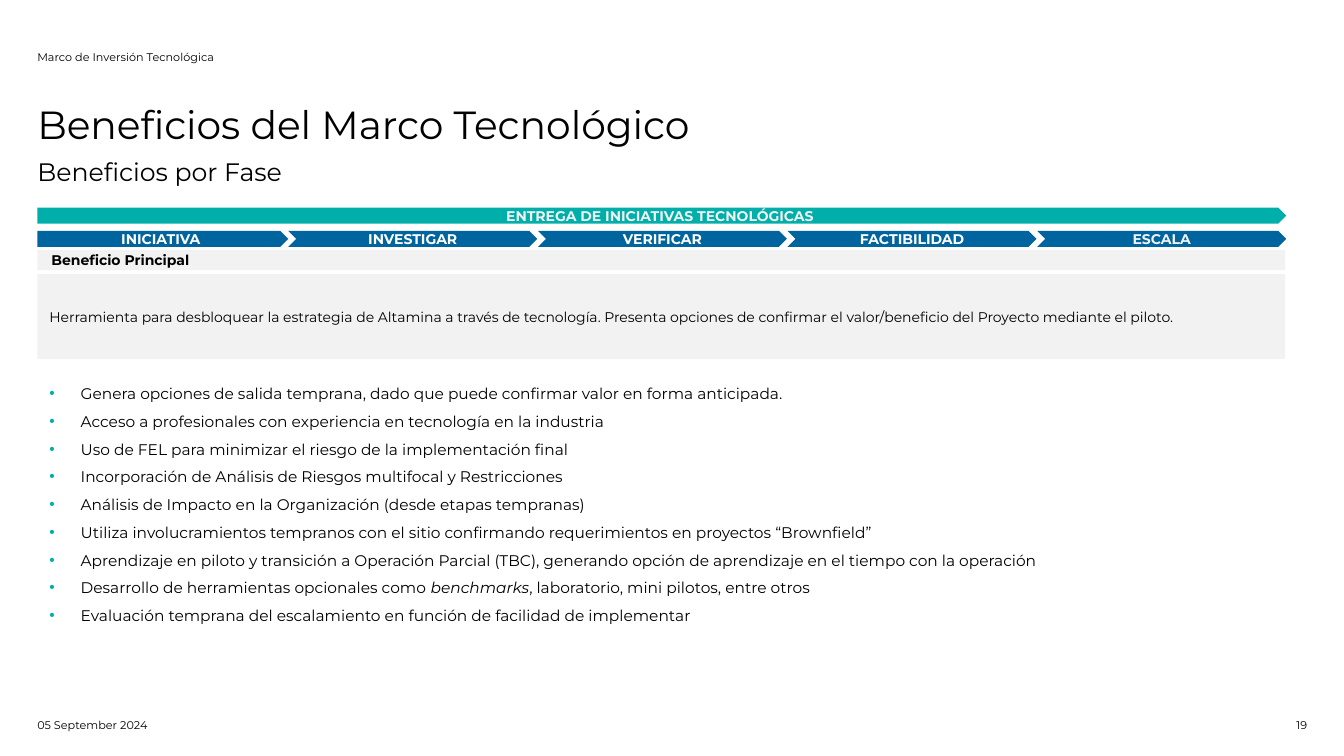
"""Build the slide on the benefits of the technology framework by phase."""
from dataclasses import dataclass

from lxml.etree import SubElement
from pptx import Presentation
from pptx.dml.color import RGBColor
from pptx.enum.shapes import MSO_SHAPE
from pptx.enum.text import MSO_ANCHOR, MSO_AUTO_SIZE, PP_ALIGN
from pptx.oxml.ns import qn
from pptx.util import Pt


@dataclass(frozen=True)
class Theme:
    font: str = "Montserrat"
    black: str = "000000"
    white: str = "FFFFFF"
    gray: str = "F2F2F2"
    teal: str = "00AFAA"
    blue: str = "00649E"
    title: float = 28
    head: float = 18
    list: float = 11
    label: float = 10
    small: float = 8


@dataclass(frozen=True)
class Box:
    left: float
    top: float
    width: float
    height: float

    def spread(self) -> tuple:
        return tuple(Pt(n) for n in (self.left, self.top, self.width, self.height))


@dataclass(frozen=True)
class Note:
    text: str
    box: Box
    align: PP_ALIGN = PP_ALIGN.LEFT
    anchor: MSO_ANCHOR = MSO_ANCHOR.TOP


@dataclass(frozen=True)
class Panel:
    text: str
    box: Box
    inset: float
    bold: bool = False


@dataclass(frozen=True)
class Arrow:
    text: str
    box: Box
    kind: MSO_SHAPE
    fill: str
    color: str


THEME = Theme()
EDGE = 26.64
WIDE = 891.36
BAR = 11.52
STEP = 178.32
LAST = 740.88
INDENT = 22.3

NOTES = [
    Note("Marco de Inversión Tecnológica", Box(EDGE, 30.96, 283.68, 14.4), anchor=MSO_ANCHOR.BOTTOM),
    Note("05 September 2024", Box(EDGE, 513.36, 113, 17.3)),
    Note("19", Box(876.96, 513.36, 56.9, 14.4), align=PP_ALIGN.RIGHT),
]
PANELS = [
    Panel("Beneficio Principal", Box(EDGE, 178.56, WIDE, 14.4), 10.1, True),
    Panel("Herramienta para desbloquear la estrategia de Altamina a través de tecnología. "
          "Presenta opciones de confirmar el valor/beneficio del Proyecto mediante el piloto.",
          Box(EDGE, 195.84, WIDE, 60.5), 8.64),
]
PHASES = ["INICIATIVA", "INVESTIGAR", "VERIFICAR", "FACTIBILIDAD", "ESCALA"]
GAINS = [
    "Genera opciones de salida temprana, dado que puede confirmar valor en forma anticipada.",
    "Acceso a profesionales con experiencia en tecnología en la industria",
    "Uso de FEL para minimizar el riesgo de la implementación final",
    "Incorporación de Análisis de Riesgos multifocal y Restricciones",
    "Análisis de Impacto en la Organización (desde etapas tempranas)",
    "Utiliza involucramientos tempranos con el sitio confirmando requerimientos en proyectos “Brownfield”",
    "Aprendizaje en piloto y transición a Operación Parcial (TBC), "
    "generando opción de aprendizaje en el tiempo con la operación",
    "Desarrollo de herramientas opcionales como *benchmarks*, laboratorio, mini pilotos, entre otros",
    "Evaluación temprana del escalamiento en función de facilidad de implementar",
]


def mark(line, bullet: bool) -> None:
    props = line._p.get_or_add_pPr()
    props.set("marL", str(Pt(INDENT) if bullet else 0))
    props.set("indent", str(-Pt(INDENT) if bullet else 0))
    if bullet:
        tint = SubElement(props, qn("a:buClr"))
        SubElement(tint, qn("a:srgbClr")).set("val", THEME.teal)
        SubElement(props, qn("a:buChar")).set("char", "•")
    else:
        SubElement(props, qn("a:buNone"))


def write(shape, lines: list[str], *, size: float, color: str = THEME.black, bold: bool = False,
          align: PP_ALIGN = PP_ALIGN.LEFT, anchor: MSO_ANCHOR = MSO_ANCHOR.TOP,
          inset: tuple = (0, 0, 0, 0), pitch: float = 1.0, bullet: bool = False) -> None:
    frame = shape.text_frame
    frame.word_wrap = True
    frame.auto_size = MSO_AUTO_SIZE.NONE
    frame.vertical_anchor = anchor
    (frame.margin_left, frame.margin_top,
     frame.margin_right, frame.margin_bottom) = (Pt(n) for n in inset)
    for rank, text in enumerate(lines):
        line = frame.add_paragraph() if rank else frame.paragraphs[0]
        line.alignment = align
        line.line_spacing = pitch
        line.space_before = line.space_after = Pt(0)
        mark(line, bullet)
        for part, words in enumerate(text.split("*")):
            run = line.add_run()
            run.text = words
            font = run.font
            font.name, font.size, font.bold = THEME.font, Pt(size), bold
            font.italic = part % 2 == 1
            font.color.rgb = RGBColor.from_string(color)


def place(shape, box: Box) -> None:
    shape.left, shape.top, shape.width, shape.height = box.spread()


def block(slide, kind: MSO_SHAPE, box: Box, fill: str):
    shape = slide.shapes.add_shape(kind, *box.spread())
    shape.shadow.inherit = False
    shape.fill.solid()
    shape.fill.fore_color.rgb = RGBColor.from_string(fill)
    shape.line.fill.background()
    return shape


def arrows() -> list[Arrow]:
    tip = MSO_SHAPE.PENTAGON
    row = [Arrow("ENTREGA DE INICIATIVAS TECNOLÓGICAS", Box(EDGE, 148.32, 892.08, BAR),
                 tip, THEME.teal, THEME.gray)]
    for rank, name in enumerate(PHASES):
        left = LAST - STEP * (len(PHASES) - 1 - rank) if rank else EDGE
        kind = MSO_SHAPE.CHEVRON if rank else tip
        color = THEME.gray if name == PHASES[-1] else THEME.white
        width = 177.84 if rank else 179.28
        row.append(Arrow(name, Box(left, 164.88, width, BAR), kind, THEME.blue, color))
    return row


def main() -> None:
    deck = Presentation()
    deck.slide_width, deck.slide_height = Pt(960), Pt(540)
    slide = deck.slides.add_slide(deck.slide_layouts[3])
    title, head, body = slide.placeholders

    place(title, Box(EDGE, 43.2, 794.16, 62.64))
    write(title, ["Beneficios del Marco Tecnológico"], size=THEME.title,
          anchor=MSO_ANCHOR.BOTTOM, pitch=0.9)
    place(head, Box(EDGE, 105.84, 396.72, 42.48))
    write(head, ["Beneficios por Fase"], size=THEME.head, inset=(0, 5.76, 0, 0))
    place(body, Box(35.28, 267.84, WIDE, 228.96))
    write(body, GAINS, size=THEME.list, pitch=1.5, bullet=True)

    for note in NOTES:
        write(slide.shapes.add_textbox(*note.box.spread()), [note.text], size=THEME.small,
              align=note.align, anchor=note.anchor)
    for panel in PANELS:
        write(block(slide, MSO_SHAPE.RECTANGLE, panel.box, THEME.gray), [panel.text],
              size=THEME.label, bold=panel.bold, anchor=MSO_ANCHOR.MIDDLE,
              inset=(panel.inset, 0, 0, 0))
    for arrow in arrows():
        write(block(slide, arrow.kind, arrow.box, arrow.fill), [arrow.text], size=THEME.label,
              color=arrow.color, bold=True, align=PP_ALIGN.CENTER, anchor=MSO_ANCHOR.MIDDLE,
              inset=(10.8, 5, 10.8, 5))
    deck.save("out.pptx")


if __name__ == "__main__":
    main()
